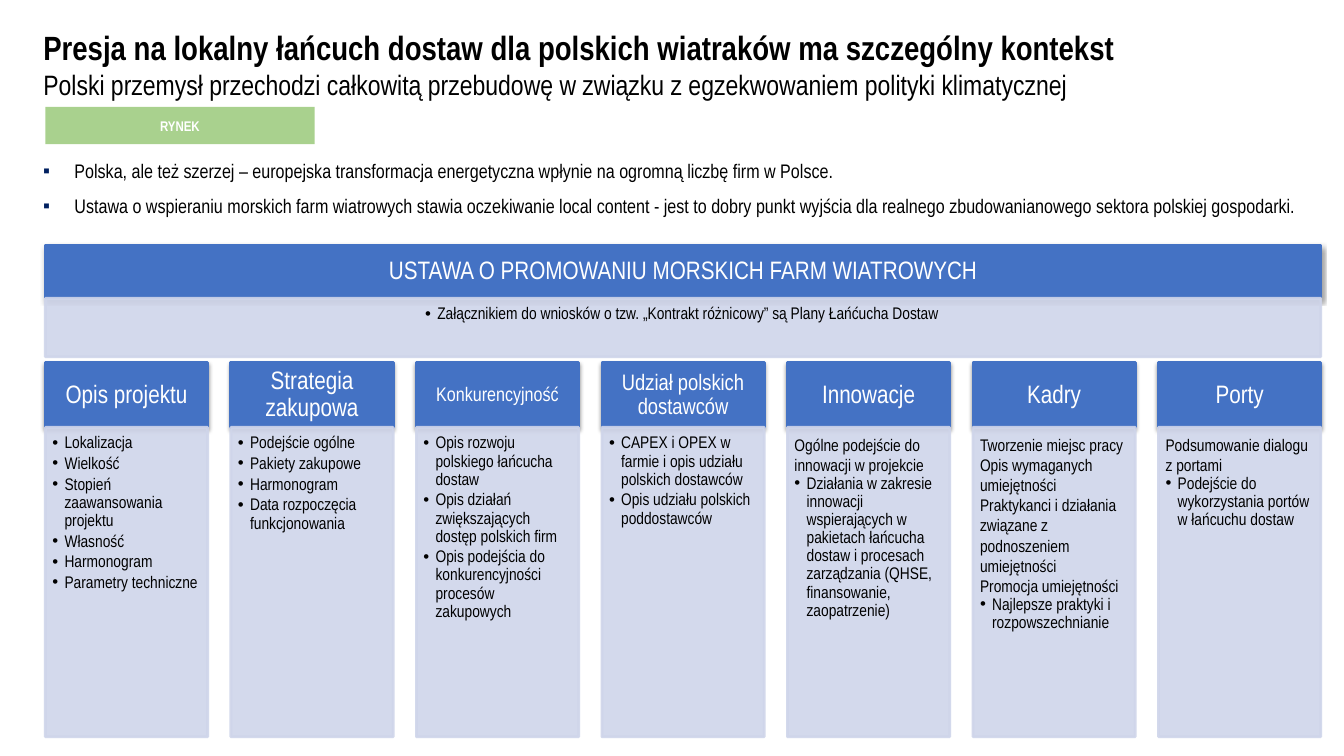
from pptx import Presentation
from pptx.dml.color import RGBColor
from pptx.enum.shapes import MSO_SHAPE
from pptx.enum.text import MSO_ANCHOR, MSO_AUTO_SIZE, PP_ALIGN
from pptx.oxml.ns import qn
from pptx.util import Inches, Pt
from lxml.etree import SubElement

COLORS = {"ink": "000000", "white": "FFFFFF", "head": "4472C4",
          "body": "CFD5EA", "tag": "A9D18E", "mark": "002060"}
FONT = "Arial Narrow"

TITLE = "Presja na lokalny łańcuch dostaw dla polskich wiatraków ma szczególny kontekst"
SUB = "Polski przemysł przechodzi całkowitą przebudowę w związku z egzekwowaniem polityki klimatycznej"
TAG = "RYNEK"
INTRO = [
    "Polska, ale też szerzej – europejska transformacja energetyczna wpłynie na ogromną liczbę firm w Polsce.",
    "Ustawa o wspieraniu morskich farm wiatrowych stawia oczekiwanie local content - jest to dobry punkt "
    "wyjścia dla realnego zbudowanianowego sektora polskiej gospodarki.",
]
ACT = "USTAWA O PROMOWANIU MORSKICH FARM WIATROWYCH"
ANNEX = "Załącznikiem do wniosków o tzw. „Kontrakt różnicowy” są Plany Łańćucha Dostaw"

# heading, size, plain lines, bulleted lines
PLANS = [
    ("Opis projektu", 18, [],
     ["Lokalizacja", "Wielkość", "Stopień zaawansowania projektu",
      "Własność", "Harmonogram", "Parametry techniczne"]),
    ("Strategia zakupowa", 18, [],
     ["Podejście ogólne", "Pakiety zakupowe", "Harmonogram",
      "Data rozpoczęcia funkcjonowania"]),
    ("Konkurencyjność", 14, [],
     ["Opis rozwoju polskiego łańcucha dostaw",
      "Opis działań zwiększających dostęp polskich firm",
      "Opis podejścia do konkurencyjności procesów zakupowych"]),
    ("Udział polskich dostawców", 16, [],
     ["CAPEX i OPEX w farmie i opis udziału polskich dostawców",
      "Opis udziału polskich poddostawców"]),
    ("Innowacje", 18, ["Ogólne podejście do innowacji w projekcie"],
     ["Działania w zakresie innowacji wspierających w pakietach łańcucha dostaw "
      "i procesach zarządzania (QHSE, finansowanie, zaopatrzenie)"]),
    ("Kadry", 18,
     ["Tworzenie miejsc pracy", "Opis wymaganych umiejętności",
      "Praktykanci i działania związane z podnoszeniem umiejętności",
      "Promocja umiejętności"],
     ["Najlepsze praktyki i rozpowszechnianie"]),
    ("Porty", 18, ["Podsumowanie dialogu z portami"],
     ["Podejście do wykorzystania portów w łańcuchu dostaw"]),
]
LEFT, WIDE, COL = 0.45, 12.65, 1.61
STEP = (WIDE - COL) / (len(PLANS) - 1)


def color(name):
    return RGBColor.from_string(COLORS[name])


def write(para, text, size, ink="ink", bold=False):
    run = para.add_run()
    run.text = text
    font = run.font
    font.name, font.size, font.bold = FONT, Pt(size), bold
    font.color.rgb = color(ink)


def setup(frame, pads, anchor=MSO_ANCHOR.TOP):
    frame.word_wrap = True
    frame.vertical_anchor = anchor
    (frame.margin_left, frame.margin_top,
     frame.margin_right, frame.margin_bottom) = map(Inches, pads)


def lines(frame):
    yield frame.paragraphs[0]
    while True:
        yield frame.add_paragraph()


def bullet(para, char, ink, dent):
    props = para._p.get_or_add_pPr()
    props.set("marL", str(Inches(dent)))
    props.set("indent", str(-Inches(dent)))
    tint = SubElement(props, qn("a:buClr"))
    SubElement(tint, qn("a:srgbClr"), val=COLORS[ink])
    SubElement(props, qn("a:buFont"), typeface="Arial")
    SubElement(props, qn("a:buChar"), char=char)


def box(x, y, w, h, fill):
    shape = slide.shapes.add_shape(MSO_SHAPE.RECTANGLE, *map(Inches, (x, y, w, h)))
    shape.shadow.inherit = False
    shape.fill.solid()
    shape.fill.fore_color.rgb = color(fill)
    shape.line.fill.background()
    return shape


def edge(shape, fill):
    shape.line.color.rgb = color(fill)
    shape.line.width = Pt(2)


def header(x, y, w, h, text, size):
    shape = box(x, y, w, h, "head")
    edge(shape, "head")
    effects = shape._element.spPr.find(qn("a:effectLst"))
    shade = SubElement(effects, qn("a:outerShdw"), blurRad=str(Pt(3.1)),
                       dist=str(Pt(1.6)), dir="5400000", rotWithShape="0")
    black = SubElement(shade, qn("a:srgbClr"), val=COLORS["ink"])
    SubElement(black, qn("a:alpha"), val="38000")
    side, top = size / 130, size / 230
    setup(shape.text_frame, (side, top, side, top), MSO_ANCHOR.MIDDLE)
    para = shape.text_frame.paragraphs[0]
    para.alignment = PP_ALIGN.CENTER
    para.line_spacing = 0.9
    write(para, text, size, "white")


def panel(x, y, w, h, plain, points, align=PP_ALIGN.LEFT):
    shape = box(x, y, w, h, "body")
    edge(shape, "body")
    for tint in shape._element.spPr.iter(qn("a:srgbClr")):
        SubElement(tint, qn("a:alpha"), val="90000")
    setup(shape.text_frame, (0.07, 0.07, 0.09, 0.1))
    paras = lines(shape.text_frame)
    for text in plain:
        para = next(paras)
        para.alignment = align
        write(para, text, 12)
    for text in points:
        para = next(paras)
        para.alignment = align
        para.line_spacing = 0.9
        para.space_after = Pt(1.8)
        bullet(para, "•", "ink", 0.12)
        write(para, text, 12)


deck = Presentation()
deck.slide_width, deck.slide_height = Inches(13.33), Inches(7.5)
slide = deck.slides.add_slide(deck.slide_layouts[5])

title = slide.shapes.title
title.left, title.top, title.width, title.height = map(Inches, (0.33, 0.22, 12.34, 0.84))
setup(title.text_frame, (0.1, 0.05, 0.1, 0.05))
title.text_frame.auto_size = MSO_AUTO_SIZE.NONE
para = title.text_frame.paragraphs[0]
para.alignment = PP_ALIGN.LEFT
write(para, TITLE, 24, bold=True)
para.add_line_break()
write(para, SUB, 20)

intro = slide.shapes.add_textbox(*map(Inches, (0.33, 1.41, WIDE, 0.76))).text_frame
setup(intro, (0.1, 0.05, 0.1, 0.05))
for text, para in zip(INTRO, lines(intro)):
    para.line_spacing = 1.5
    bullet(para, "▪", "mark", 0.31)
    write(para, text, 14)

for i, (head, size, plain, points) in enumerate(PLANS):
    x = LEFT + i * STEP
    header(x, 3.6, COL, 0.64, head, size)
    panel(x, 4.24, COL, 3.07, plain, points)

header(LEFT, 2.43, WIDE, 0.52, ACT, 18)
panel(LEFT, 2.96, WIDE, 0.58, [], [ANNEX], PP_ALIGN.CENTER)

tag = box(LEFT, 1.06, 2.67, 0.37, "tag")
setup(tag.text_frame, (0.1, 0.05, 0.1, 0.05), MSO_ANCHOR.MIDDLE)
para = tag.text_frame.paragraphs[0]
para.alignment = PP_ALIGN.CENTER
write(para, TAG, 10, "white", True)

deck.save("out.pptx")
